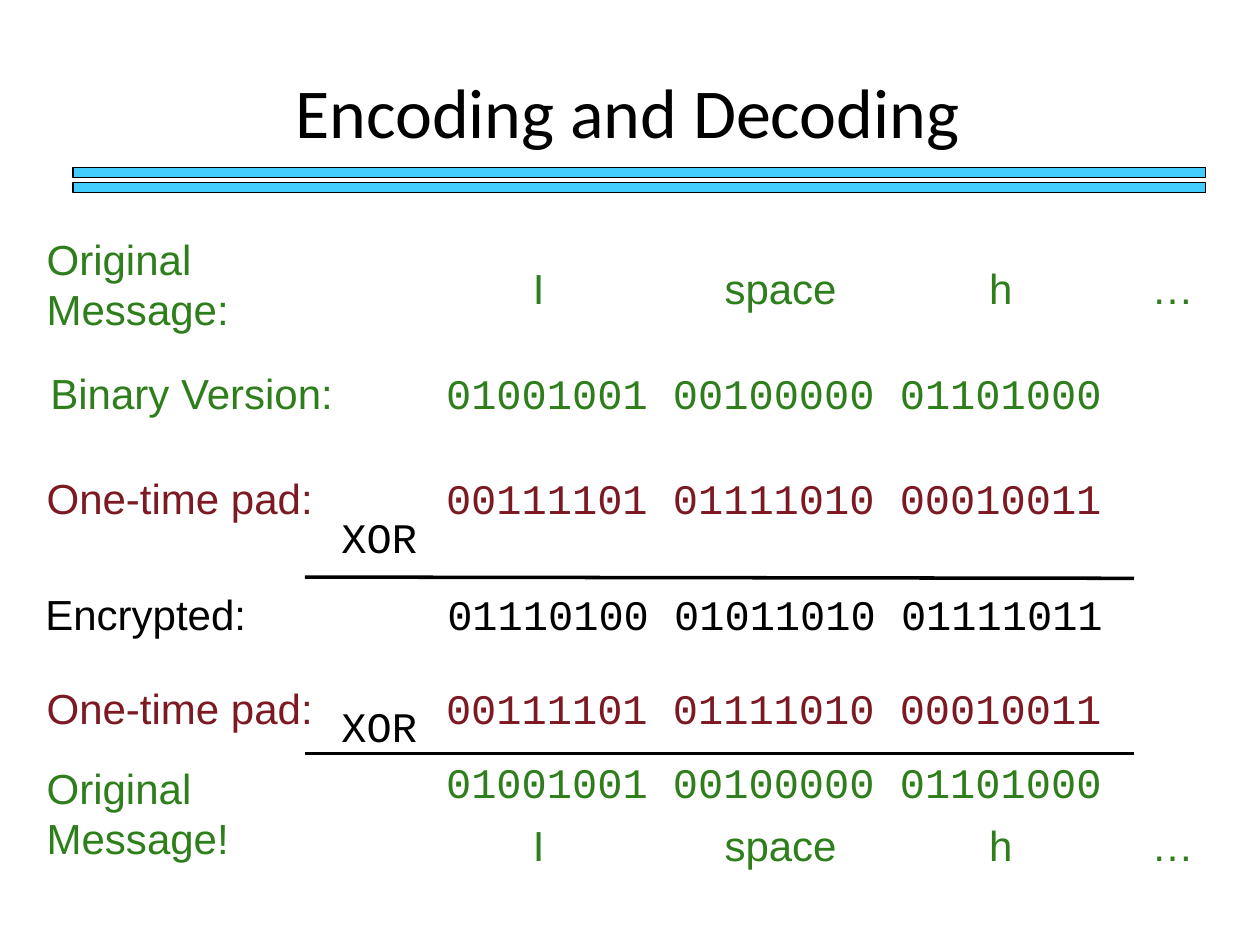
from dataclasses import dataclass

from lxml import etree
from pptx import Presentation
from pptx.dml.color import RGBColor
from pptx.enum.shapes import MSO_CONNECTOR, MSO_SHAPE
from pptx.enum.text import MSO_ANCHOR, PP_ALIGN
from pptx.oxml.ns import qn
from pptx.util import Emu, Pt

RECT = MSO_SHAPE.RECTANGLE
LINE = MSO_CONNECTOR.STRAIGHT
TOP, MID = MSO_ANCHOR.TOP, MSO_ANCHOR.MIDDLE
LEFT, MIDDLE = PP_ALIGN.LEFT, PP_ALIGN.CENTER

SCALE = 9144  # EMU per px, 100 px to the inch
GREEN, RED, BLACK, BLUE = "2E7E1C", "7C1923", "000000", "42CBFD"
SANS, MONO = "Arial", "Courier New"
TABS = (152, 362, 491)


@dataclass
class Label:
    text: str
    x: int
    y: int
    w: int
    color: str
    font: str = SANS
    h: int = 49


def px(n: int) -> Emu:
    return Emu(n * SCALE)


def rgb(code: str) -> RGBColor:
    return RGBColor.from_string(code)


def write(slide, text: str, x: int, y: int, w: int, h: int, *, color: str = BLACK,
          font: str = SANS, size: int = 24, align=LEFT, anchor=TOP,
          pad: tuple = (0, 0, 4, 0), dent: int = 4, tabs: tuple = ()) -> None:
    frame = slide.shapes.add_textbox(px(x), px(y), px(w), px(h)).text_frame
    frame.word_wrap = True
    frame.vertical_anchor = anchor
    frame.margin_left, frame.margin_top, frame.margin_right, frame.margin_bottom = map(px, pad)
    frame.text = text
    for para in frame.paragraphs:
        para.alignment = align
        para.font.size = Pt(size)
        props = para._p.get_or_add_pPr()
        props.set("marL", str(px(dent)))
        if tabs:
            stops = etree.Element(qn("a:tabLst"))
            for pos in tabs:
                etree.SubElement(stops, qn("a:tab"), pos=str(px(pos)), algn="l")
            props.insert(0, stops)
        for run in para.runs:
            run.font.name = font
            run.font.size = Pt(size)
            run.font.color.rgb = rgb(color)


def bar(slide, y: int) -> None:
    shape = slide.shapes.add_shape(RECT, px(58), px(y), px(899), px(8))
    shape.shadow.inherit = False
    shape.fill.solid()
    shape.fill.fore_color.rgb = rgb(BLUE)
    shape.line.color.rgb = rgb(BLACK)
    shape.line.width = Pt(0.75)


def rule(slide, y: int, end: int) -> None:
    line = slide.shapes.add_connector(LINE, px(242), px(y), px(900), px(end))
    line.line.color.rgb = rgb(BLACK)
    line.line.width = Pt(2)
    etree.SubElement(line._element.spPr, qn("a:effectLst"))


def main() -> None:
    deck = Presentation()
    deck.slide_width, deck.slide_height = px(1000), px(750)
    slide = deck.slides.add_slide(deck.slide_layouts[6])

    # Title and double bar
    write(slide, "Encoding and Decoding", 75, 0, 850, 175, font="Calibri", size=40,
          align=MIDDLE, anchor=MID, pad=(10, 5, 14, 5), dent=0)
    for y in (133, 145):
        bar(slide, y)

    # Message letters, above and below the sums
    for y in (208, 650):
        write(slide, "I\tspace\th\t…", 419, y, 537, 49, color=GREEN, tabs=TABS)

    # Plain bits, before and after
    for y in (292, 600):
        write(slide, "01001001 00100000 01101000", 350, y, 739, 49, color=GREEN, font=MONO)

    # Key rows, each with its operator
    for y, low in ((375, 406), (542, 556)):
        write(slide, "One-time pad:", 33, y, 228, 49, color=RED)
        write(slide, "00111101 01111010 00010011", 350, y, 537, 49, color=RED, font=MONO)
        write(slide, "XOR", 267, low, 77, 49, font=MONO)

    # Sum lines
    rule(slide, 458, 459)
    rule(slide, 598, 598)

    # Remaining labels and the encrypted bits
    for item in (
        Label("Original Message:", 33, 185, 231, GREEN, h=88),
        Label("Binary Version:", 36, 292, 289, GREEN),
        Label("Encrypted:", 32, 467, 176, BLACK),
        Label("01110100 01011010 01111011", 351, 467, 537, BLACK, MONO),
        Label("Original\nMessage!", 33, 605, 161, GREEN, h=88),
    ):
        write(slide, item.text, item.x, item.y, item.w, item.h,
              color=item.color, font=item.font)

    deck.save("out.pptx")


if __name__ == "__main__":
    main()
